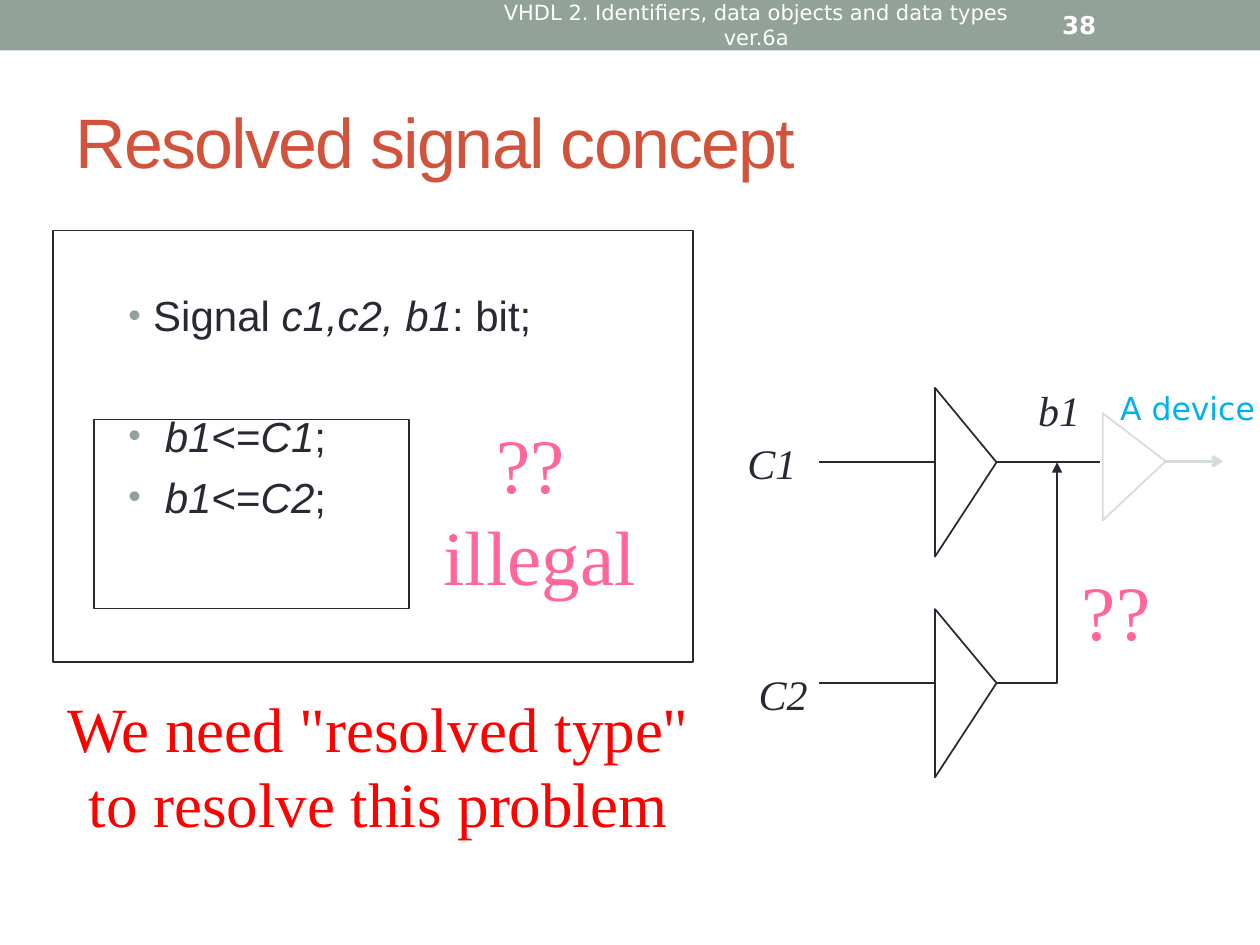
from lxml import etree
from pptx import Presentation
from pptx import util as u
from pptx.dml.color import RGBColor
from pptx.enum import shapes, text
from pptx.oxml import ns

INK, SAGE, PALE, PINK = "292934", "93A299", "D6DDD9", "FF6699"
SANS, SERIF, UI = "Arial", "Times New Roman", "DejaVu Sans"
LEFT, CENTER = text.PP_ALIGN.LEFT, text.PP_ALIGN.CENTER
TOP, MIDDLE = text.MSO_ANCHOR.TOP, text.MSO_ANCHOR.MIDDLE
color = RGBColor.from_string

deck = Presentation()
deck.slide_width, deck.slide_height = u.Cm(25.4), u.Cm(19.05)
page = deck.slides.add_slide(deck.slide_layouts[6])


def add_text(lines, place, size, font, ink, align=CENTER, anchor=MIDDLE, wrap=False):
    box = page.shapes.add_textbox(*map(u.Cm, place))
    frame = box.text_frame
    frame.text = lines
    frame.word_wrap = wrap
    frame.vertical_anchor = anchor
    for para in frame.paragraphs:
        para.alignment = align
        for span in para.runs:
            span.font.size, span.font.name = u.Pt(size), font
            span.font.color.rgb = color(ink)
    return box


def style_line(shape, ink=INK, width=1, arrow=None):
    shape.line.color.rgb = color(ink)
    shape.line.width = u.Pt(width)
    if arrow:
        etree.SubElement(shape.line._get_or_add_ln(), ns.qn("a:tailEnd"), type=arrow)
    if hasattr(shape, "shadow"):
        shape.shadow.inherit = False
    else:
        etree.SubElement(shape._element.spPr, ns.qn("a:effectLst"))


# Header band, footer text and slide number
band = page.shapes.add_shape(shapes.MSO_SHAPE.RECTANGLE, 0, 0, deck.slide_width, u.Cm(1.02))
band.fill.solid()
band.fill.fore_color.rgb = color(SAGE)
band.line.fill.background()
band.shadow.inherit = False
add_text("VHDL 2. Identifiers, data objects and data types ver.6a",
         (9.53, 0.05, 11.43, 0.91), 12, UI, "FFFFFF", wrap=True)
number = add_text("38", (21.16, 0.05, 2.97, 0.91), 14, UI, "FFFFFF", LEFT, wrap=True)
number.text_frame.paragraphs[0].runs[0].font.bold = True

# Title
title = add_text("Resolved signal concept", (1.27, 1.47, 22.86, 2.74),
                 40, SANS, "D2533C", LEFT, wrap=True)
title.text_frame.paragraphs[0].runs[0].font._element.set("spc", "-100")

# Code lines: (space before, [(text, italic), ...])
code = [
    (2, [("Signal ", False), ("c1,c2, b1", True), (": bit;", False)]),
    (40, [(" b1", True), ("<=", False), ("C1", True), (";", False)]),
    (6, [(" b1", True), ("<=", False), ("C2", True), (";", False)]),
]
body = page.shapes.add_textbox(u.Cm(2.34), u.Cm(5.72), u.Cm(21.59), u.Cm(11.43))
frame = body.text_frame
frame.word_wrap = True
for index, (gap, pieces) in enumerate(code):
    para = frame.add_paragraph() if index else frame.paragraphs[0]
    para.space_before = u.Pt(gap)
    for words, italic in pieces:
        span = para.add_run()
        span.text = words
        span.font.size, span.font.name, span.font.italic = u.Pt(24), SANS, italic
        span.font.color.rgb = color(INK)
    props = para._p.get_or_add_pPr()
    props.set("marL", str(u.Cm(0.5)))
    props.set("indent", str(-u.Cm(0.5)))
    bullet_color = etree.SubElement(props, ns.qn("a:buClr"))
    etree.SubElement(bullet_color, ns.qn("a:srgbClr"), val=SAGE)
    etree.SubElement(props, ns.qn("a:buSzPct"), val="85000")
    etree.SubElement(props, ns.qn("a:buFont"), typeface=SANS)
    etree.SubElement(props, ns.qn("a:buChar"), char="•")

# Frames around the code and around the two assignments
for place in [(1.07, 4.65, 12.9, 8.69), (1.9, 8.46, 6.35, 3.81)]:
    outline = page.shapes.add_shape(shapes.MSO_SHAPE.RECTANGLE, *map(u.Cm, place))
    outline.fill.background()
    style_line(outline)

# Drivers, receiving device and the feedback wire
outlines = [
    ([(18.85, 7.82), (18.85, 11.22), (20.09, 9.32)], True, INK, None),
    ([(18.85, 12.28), (18.85, 15.67), (20.09, 13.77)], True, INK, None),
    ([(22.23, 8.33), (22.23, 10.49), (23.5, 9.3)], True, PALE, None),
    ([(20.09, 13.77), (21.31, 13.77), (21.31, 9.32)], False, INK, "triangle"),
]
for points, closed, ink, arrow in outlines:
    start, *rest = [(u.Cm(x), u.Cm(y)) for x, y in points]
    builder = page.shapes.build_freeform(*start)
    builder.add_line_segments(rest, close=closed)
    outline = builder.convert_to_shape()
    outline.fill.background()
    style_line(outline, ink, arrow=arrow)

# Straight wires: x from, x to, y
wires = [
    (16.51, 18.85, 9.32, INK, 1, None),
    (20.09, 22.17, 9.32, INK, 1, None),
    (16.51, 18.85, 13.77, INK, 1, None),
    (23.5, 24.66, 9.3, PALE, 2, "arrow"),
]
for x1, x2, y, ink, width, arrow in wires:
    wire = page.shapes.add_connector(shapes.MSO_CONNECTOR.STRAIGHT,
                                     u.Cm(x1), u.Cm(y), u.Cm(x2), u.Cm(y))
    style_line(wire, ink, width, arrow)

# Signal names
for name, x, y in [("C1", 14.81, 8.69), ("b1", 20.6, 7.62), ("C2", 15.04, 13.34)]:
    label = add_text(name, (x, y, 1.5, 1.27), 24, SERIF, INK)
    label.text_frame.paragraphs[0].runs[0].font.italic = True

# Remarks
add_text("?? \nillegal", (8.69, 8.26, 4.39, 3.99), 44, SERIF, PINK)
add_text("??", (21.56, 11.23, 1.88, 2.11), 44, SERIF, PINK)
add_text('We need "resolved type"\nto resolve this problem',
         (0.64, 13.77, 13.97, 3.68), 36, SERIF, "FF0000", anchor=TOP)
add_text("A device", (22.33, 7.72, 3.23, 1.02), 18, UI, "00B0F0", LEFT, TOP)

deck.save("out.pptx")
